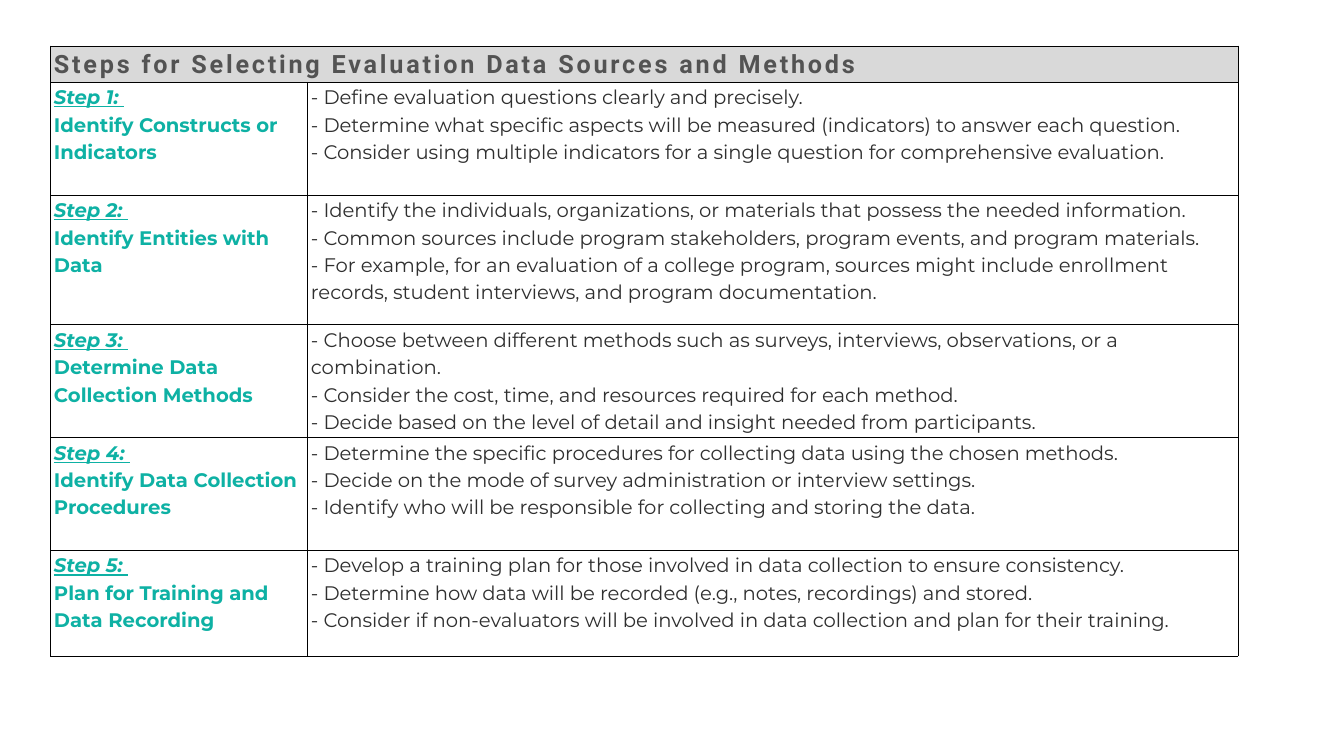
from dataclasses import dataclass

from lxml.etree import SubElement
from pptx import Presentation
from pptx.dml.color import RGBColor
from pptx.enum.text import MSO_ANCHOR
from pptx.oxml.ns import qn
from pptx.table import _Cell as Cell
from pptx.util import Cm, Pt

BLACK = RGBColor(0x00, 0x00, 0x00)
GREY = RGBColor(0x53, 0x53, 0x53)
CHARCOAL = RGBColor(0x2F, 0x2F, 0x2F)
TEAL = RGBColor(0x0E, 0xB1, 0xA4)
HEADING_FILL = RGBColor(0xD9, 0xD9, 0xD9)

HEADING = "Steps for Selecting Evaluation Data Sources and Methods"
HEADING_HEIGHT = 1.83
COLUMN_WIDTHS = (12.95, 46.91)


@dataclass(frozen=True)
class Step:
    name: str
    height: float
    actions: tuple[str, ...]


STEPS = (
    Step("Identify Constructs or Indicators", 5.69, (
        "Define evaluation questions clearly and precisely.",
        "Determine what specific aspects will be measured (indicators) to answer each question.",
        "Consider using multiple indicators for a single question for comprehensive evaluation.",
    )),
    Step("Identify Entities with Data", 6.53, (
        "Identify the individuals, organizations, or materials that possess the needed information.",
        "Common sources include program stakeholders, program events, and program materials.",
        "For example, for an evaluation of a college program, sources might include enrollment "
        "records, student interviews, and program documentation.",
    )),
    Step("Determine Data Collection Methods", 5.69, (
        "Choose between different methods such as surveys, interviews, observations, or a combination.",
        "Consider the cost, time, and resources required for each method.",
        "Decide based on the level of detail and insight needed from participants.",
    )),
    Step("Identify Data Collection Procedures", 5.69, (
        "Determine the specific procedures for collecting data using the chosen methods.",
        "Decide on the mode of survey administration or interview settings.",
        "Identify who will be responsible for collecting and storing the data.",
    )),
    Step("Plan for Training and Data Recording", 5.33, (
        "Develop a training plan for those involved in data collection to ensure consistency.",
        "Determine how data will be recorded (e.g., notes, recordings) and stored.",
        "Consider if non-evaluators will be involved in data collection and plan for their training.",
    )),
)


def format_cell(cell: Cell, fill: RGBColor | None = None) -> None:
    """Set margins, black borders and fill."""
    cell.margin_left = cell.margin_right = Cm(0.18)
    cell.margin_top = cell.margin_bottom = 0
    cell.vertical_anchor = MSO_ANCHOR.TOP
    properties = cell._tc.get_or_add_tcPr()
    for side in ("lnL", "lnR", "lnT", "lnB"):
        border = SubElement(properties, qn(f"a:{side}"), w=str(Pt(1)))
        border_fill = SubElement(border, qn("a:solidFill"))
        SubElement(border_fill, qn("a:srgbClr"), val=str(BLACK))
    if fill is None:
        cell.fill.background()
    else:
        cell.fill.solid()
        cell.fill.fore_color.rgb = fill


def write_line(cell: Cell, text: str, *, color: RGBColor, size: float = 28,
               typeface: str = "Montserrat", bold: bool = False, italic: bool = False,
               underline: bool = False, tracking: float = 0) -> None:
    """Write text in the cell's empty first paragraph, or else in a new one."""
    frame = cell.text_frame
    paragraph = frame.add_paragraph() if frame.text else frame.paragraphs[0]
    paragraph.line_spacing = 1.15
    run = paragraph.add_run()
    run.text = text
    font = run.font
    font.name, font.size, font.color.rgb = typeface, Pt(size), color
    font.bold, font.italic, font.underline = bold, italic, underline
    if tracking:
        run._r.get_or_add_rPr().set("spc", str(round(tracking * 100)))


def main() -> None:
    deck = Presentation()
    deck.slide_width, deck.slide_height = Cm(67.74), Cm(38.1)
    slide = deck.slides.add_slide(deck.slide_layouts[6])

    heights = (HEADING_HEIGHT, *(step.height for step in STEPS))
    guide = slide.shapes.add_table(
        len(heights), len(COLUMN_WIDTHS), Cm(2.54), Cm(2.31),
        Cm(sum(COLUMN_WIDTHS)), Cm(sum(heights))).table
    guide.first_row = guide.horz_banding = False
    for column, width in zip(guide.columns, COLUMN_WIDTHS):
        column.width = Cm(width)
    for row, height in zip(guide.rows, heights):
        row.height = Cm(height)

    heading = guide.cell(0, 0)
    heading.merge(guide.cell(0, 1))
    for cell in guide.rows[0].cells:
        format_cell(cell, HEADING_FILL)
    write_line(heading, HEADING, color=GREY, size=36, typeface="Roboto", bold=True, tracking=4)

    for number, step in enumerate(STEPS, start=1):
        label, details = guide.rows[number].cells
        format_cell(label)
        format_cell(details)
        write_line(label, f"Step {number}: ", color=TEAL, bold=True, italic=True, underline=True)
        write_line(label, step.name, color=TEAL, bold=True)
        for action in step.actions:
            write_line(details, f"- {action}", color=CHARCOAL)

    deck.save("out.pptx")


if __name__ == "__main__":
    main()
